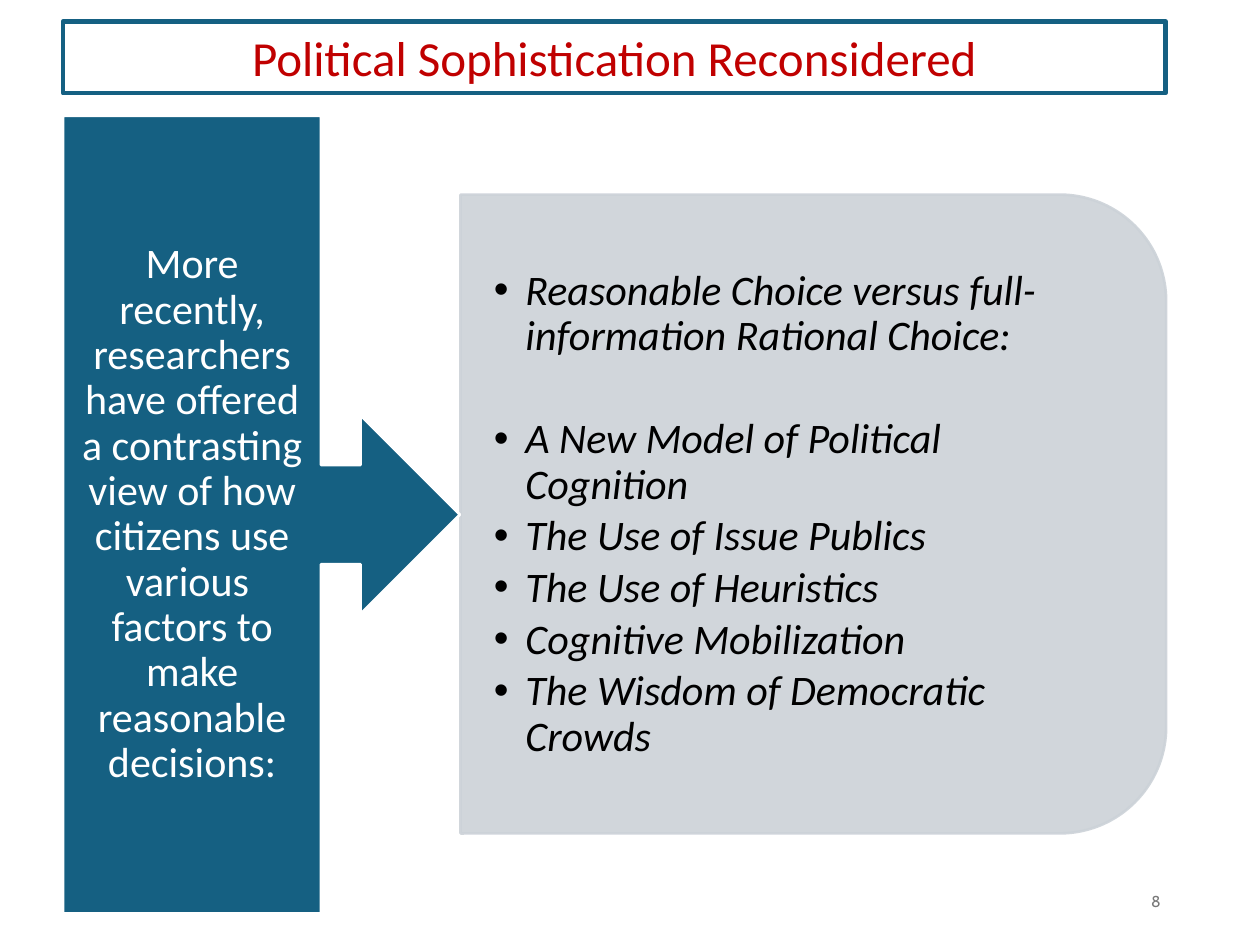
"""Build the slide on political sophistication reconsidered."""
from dataclasses import dataclass

import lxml.etree
import pptx
import pptx.dml.color
import pptx.enum.shapes
import pptx.enum.text
import pptx.oxml.ns
import pptx.util

Inches = pptx.util.Inches
Pt = pptx.util.Pt
SHAPE = pptx.enum.shapes.MSO_SHAPE
ALIGN = pptx.enum.text.PP_ALIGN
qn = pptx.oxml.ns.qn

TEAL = "156082"
GREY = "CCD2D8"
WHITE = "FFFFFF"


@dataclass(frozen=True)
class Area:
    left: float
    top: float
    width: float
    height: float

    def lengths(self) -> tuple:
        return tuple(Inches(v) for v in (self.left, self.top, self.width, self.height))


@dataclass(frozen=True)
class Style:
    size: float
    color: str
    align: ALIGN = ALIGN.LEFT
    font: str = "Calibri"
    italic: bool = False
    line_spacing: float = 1.0


@dataclass(frozen=True)
class Topic:
    text: str
    space_after: float = 3.6


TOPICS = (
    Topic("Reasonable Choice versus full-information Rational Choice:", 33),
    Topic("A New Model of Political Cognition"),
    Topic("The Use of Issue Publics"),
    Topic("The Use of Heuristics"),
    Topic("Cognitive Mobilization"),
    Topic("The Wisdom of Democratic Crowds"),
)


def rgb(value: str) -> pptx.dml.color.RGBColor:
    return pptx.dml.color.RGBColor.from_string(value)


def paint(shape, fill: str, line: str, line_width: float) -> None:
    shape.fill.solid()
    shape.fill.fore_color.rgb = rgb(fill)
    shape.line.color.rgb = rgb(line)
    shape.line.width = Pt(line_width)


def add_panel(slide, kind: SHAPE, area: Area, fill: str, line: str):
    panel = slide.shapes.add_shape(kind, *area.lengths())
    panel.shadow.inherit = False
    paint(panel, fill, line, 1.5)
    return panel


def set_opacity(shape, percent: int) -> None:
    for color in shape.element.spPr.iter(qn("a:srgbClr")):
        lxml.etree.SubElement(color, qn("a:alpha"), val=str(percent * 1000))


def format_paragraph(paragraph, style: Style) -> None:
    paragraph.alignment = style.align
    paragraph.line_spacing = style.line_spacing
    font = paragraph.font
    font.name = style.font
    font.size = Pt(style.size)
    font.italic = style.italic
    font.color.rgb = rgb(style.color)


def add_text_frame(slide, area: Area, inset_x: float = 0.1, inset_y: float = 0.05):
    frame = slide.shapes.add_textbox(*area.lengths()).text_frame
    frame.word_wrap = True
    frame.vertical_anchor = pptx.enum.text.MSO_ANCHOR.MIDDLE
    frame.margin_left = frame.margin_right = Inches(inset_x)
    frame.margin_top = frame.margin_bottom = Inches(inset_y)
    return frame


def add_text(slide, area: Area, text: str, style: Style) -> None:
    paragraph = add_text_frame(slide, area).paragraphs[0]
    paragraph.text = text
    format_paragraph(paragraph, style)


def add_bullet(paragraph) -> None:
    properties = paragraph._p.get_or_add_pPr()
    properties.set("marL", str(Inches(0.25)))
    properties.set("indent", str(-Inches(0.25)))
    lxml.etree.SubElement(properties, qn("a:buFont"), typeface="Arial")
    lxml.etree.SubElement(properties, qn("a:buChar"), char="•")


def add_topics(slide, area: Area, topics: tuple[Topic, ...], style: Style) -> None:
    frame = add_text_frame(slide, area, 0.27, 0.14)
    for index, topic in enumerate(topics):
        paragraph = frame.add_paragraph() if index else frame.paragraphs[0]
        paragraph.text = topic.text
        add_bullet(paragraph)
        format_paragraph(paragraph, style)
        paragraph.space_after = Pt(topic.space_after)


def set_title(slide, area: Area, text: str) -> None:
    title = slide.shapes.title
    title.left, title.top, title.width, title.height = area.lengths()
    paint(title, WHITE, TEAL, 2.5)
    frame = title.text_frame
    frame.text = text
    frame.auto_size = pptx.enum.text.MSO_AUTO_SIZE.NONE
    frame.vertical_anchor = pptx.enum.text.MSO_ANCHOR.MIDDLE
    format_paragraph(frame.paragraphs[0], Style(28, "C00000", ALIGN.CENTER))


def main() -> None:
    deck = pptx.Presentation()
    deck.slide_width, deck.slide_height = Inches(10), Inches(7.5)
    slide = deck.slides.add_slide(deck.slide_layouts.get_by_name("Title Only"))
    slide.background.fill.solid()
    slide.background.fill.fore_color.rgb = rgb(WHITE)

    set_title(slide, Area(0.5, 0.17, 8.75, 0.57), "Political Sophistication Reconsidered")

    topics_panel = add_panel(
        slide, SHAPE.ROUND_2_SAME_RECTANGLE, Area(3.92, 1.28, 5.07, 5.6), GREY, GREY
    )
    topics_panel.rotation = 90
    set_opacity(topics_panel, 90)
    add_topics(
        slide,
        Area(3.65, 1.8, 5.35, 4.57),
        TOPICS,
        Style(24, "000000", italic=True, line_spacing=0.9),
    )

    add_panel(slide, SHAPE.RIGHT_ARROW_CALLOUT, Area(0.5, 0.92, 3.15, 6.33), TEAL, WHITE)
    add_text(
        slide,
        Area(0.5, 0.92, 2.05, 6.33),
        "More recently, researchers have offered a contrasting view of how citizens "
        "use various  factors to make reasonable decisions:",
        Style(24, WHITE, ALIGN.CENTER, line_spacing=0.9),
    )
    add_text(
        slide,
        Area(7.06, 6.95, 2.25, 0.4),
        "8",
        Style(9, "797979", ALIGN.RIGHT, "Cabin"),
    )
    deck.save("out.pptx")


if __name__ == "__main__":
    main()
